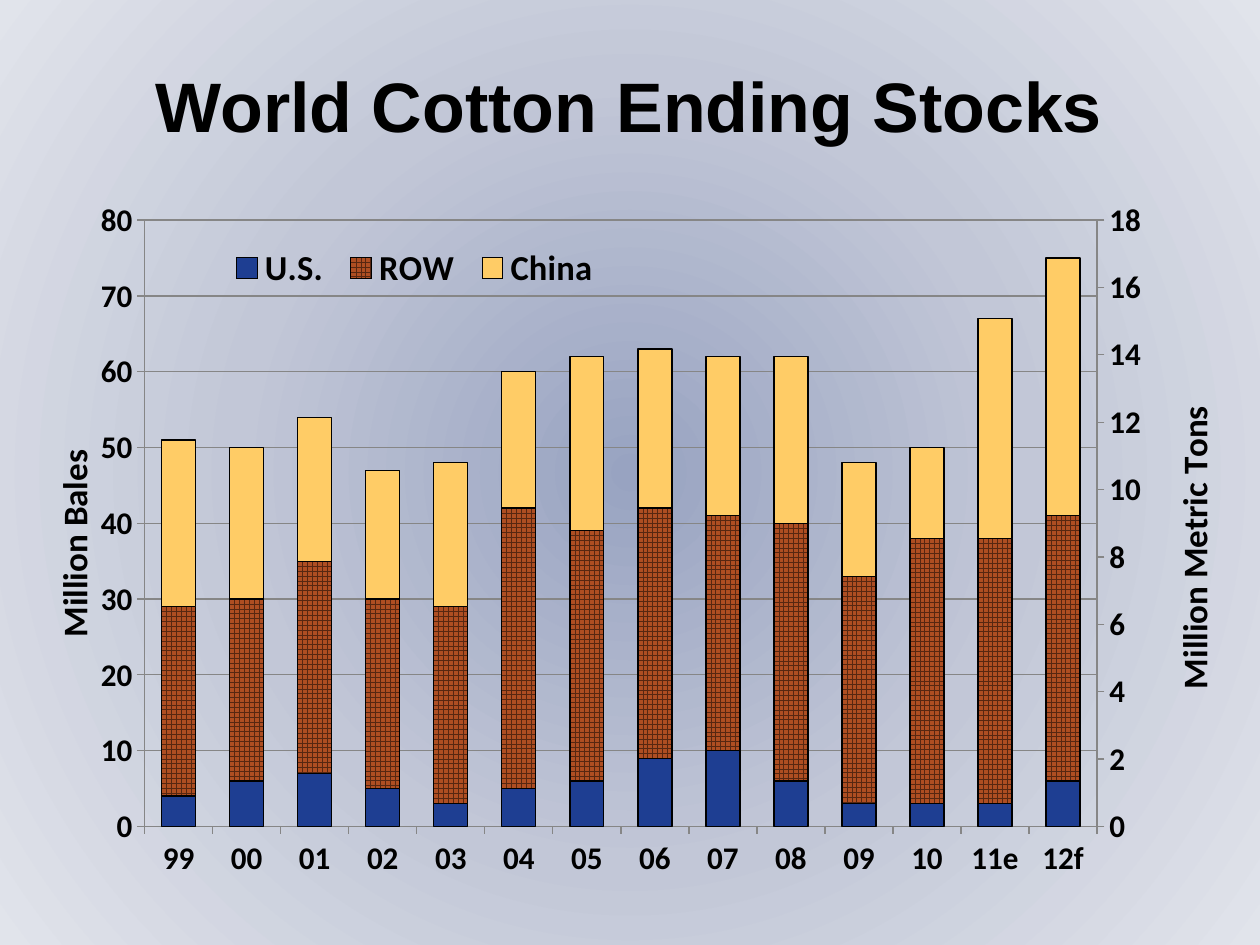
"""Build the world cotton ending stocks slide."""
import copy

import pptx
import pptx.chart.axis
import pptx.chart.data
import pptx.dml.color
import pptx.enum.chart
import pptx.enum.dml
import pptx.enum.text
import pptx.oxml
import pptx.util
from pptx.oxml.ns import nsdecls

Pt = pptx.util.Pt
COLORS = {
    "text": "000000", "axis": "868686", "us": "1E3E92", "china": "FFCC66",
    "row": "AE4E22", "row_grid": "572711",
    "center": "98A3C1", "middle": "C2C7D7", "edge": "E1E4EB",
}
YEARS = ["99", "00", "01", "02", "03", "04", "05", "06", "07", "08", "09", "10", "11e", "12f"]
BALES = {
    "U.S.": [4, 6, 7, 5, 3, 5, 6, 9, 10, 6, 3, 3, 3, 6],
    "ROW": [25, 24, 28, 25, 26, 37, 33, 33, 31, 34, 30, 35, 35, 35],
    "China": [22, 20, 19, 17, 19, 18, 23, 21, 21, 22, 15, 12, 29, 34],
}
TONS = {
    "Series 4": [0.9, 1.3, 1.6, 1.2, 0.8, 1.2, 1.3, 2.1, 2.2, 1.4, 0.6, 0.6, 0.7, 1.2],
    "Series 5": [5.4, 5.2, 6.2, 5.4, 5.6, 8, 7.2, 7.2, 6.9, 7.4, 6.5, 7.7, 7.7, 7.6],
    "Series 6": [4.9, 4.3, 4.1, 3.8, 4.1, 4, 4.9, 4.5, 4.5, 4.9, 3.3, 2.5, 6.4, 7.4],
}


def rgb(name):
    """Return the named colour."""
    return pptx.dml.color.RGBColor.from_string(COLORS[name])


def chart_xml(tag, body):
    """Return a chart element with the given content."""
    return pptx.oxml.parse_xml(f"<c:{tag} {nsdecls('c')}>{body}</c:{tag}>")


def place(parent, index, target="", **fractions):
    """Give a chart part a manual layout in fractions of the chart."""
    for old in parent.xpath("c:layout"):
        parent.remove(old)
    body = f'<c:layoutTarget val="{target}"/>' if target else ""
    body += '<c:xMode val="edge"/><c:yMode val="edge"/>'
    body += "".join(f'<c:{key} val="{val}"/>' for key, val in fractions.items())
    parent.insert(index, chart_xml("layout", f"<c:manualLayout>{body}</c:manualLayout>"))


class Deck:
    """Hold the style and the current slide."""

    title_font, chart_font = "Arial", "Calibri"

    def __init__(self, prs):
        """Add a blank slide."""
        self.s = prs.slides.add_slide(prs.slide_layouts[6])

    def style(self, font, size, name):
        """Apply the bold text style."""
        font.size, font.name, font.bold = Pt(size), name, True
        font.color.rgb = rgb("text")

    def background(self, *stops):
        """Fill the slide with a circular gradient."""
        fill = self.s.background.fill
        fill.solid()
        fill.fore_color.rgb = rgb(stops[0])
        step = 100000 // (len(stops) - 1)
        gs = "".join(f'<a:gs pos="{i * step}"><a:srgbClr val="{COLORS[name]}"/></a:gs>'
                     for i, name in enumerate(stops))
        solid = self.s.element.xpath("p:cSld/p:bg/p:bgPr/a:solidFill")[0]
        solid.getparent().replace(solid, pptx.oxml.parse_xml(
            f"<a:gradFill {nsdecls('a')} rotWithShape=\"1\"><a:gsLst>{gs}</a:gsLst>"
            '<a:path path="circle"><a:fillToRect l="50000" t="50000" r="50000" b="50000"/>'
            "</a:path></a:gradFill>"))

    def title(self, text, x, y, w, h):
        """Add the centred slide title."""
        tf = self.s.shapes.add_textbox(Pt(x), Pt(y), Pt(w), Pt(h)).text_frame
        tf.word_wrap = True
        tf.vertical_anchor = pptx.enum.text.MSO_ANCHOR.MIDDLE
        p = tf.paragraphs[0]
        p.alignment = pptx.enum.text.PP_ALIGN.CENTER
        r = p.add_run()
        r.text = text
        self.style(r.font, 40, self.title_font)

    def axis_title(self, axis, text, x, y):
        """Add a vertical axis title."""
        axis.has_title = True
        r = axis.axis_title.text_frame.paragraphs[0].add_run()
        r.text = text
        self.style(r.font, 20, self.chart_font)
        title = axis.axis_title._element
        body = title.xpath("c:tx/c:rich/a:bodyPr")[0]
        body.set("rot", "-5400000")
        body.set("vert", "horz")
        place(title, 1, x=x, y=y)

    def scale(self, axis, top, step, number_format):
        """Set the range and number format of a value axis."""
        axis.minimum_scale, axis.maximum_scale, axis.major_unit = 0, top, step
        axis.tick_labels.number_format = number_format
        axis.tick_labels.number_format_is_linked = False

    def right_axis(self, chart, count):
        """Move the series after the first count to a right axis."""
        left = chart.plots[0]._element
        right = copy.deepcopy(left)
        for ser in left.xpath("c:ser")[count:]:
            left.remove(ser)
        for ser in right.xpath("c:ser")[:count]:
            right.remove(ser)
        left.addnext(right)
        cat, val = (copy.deepcopy(a._element) for a in (chart.category_axis, chart.value_axis))
        ids = ["50010", "50020"]
        for ref, new in zip(right.xpath("c:axId"), ids):
            ref.set("val", new)
        for ax, own, other in ((cat, *ids), (val, *ids[::-1])):
            ax.xpath("c:axId")[0].set("val", own)
            ax.xpath("c:crossAx")[0].set("val", other)
        val.xpath("c:axPos")[0].set("val", "r")
        val.xpath("c:crosses")[0].set("val", "max")
        chart.value_axis._element.addnext(val)
        val.addnext(cat)
        pptx.chart.axis.CategoryAxis(cat).visible = False
        axis = pptx.chart.axis.ValueAxis(val)
        axis.has_major_gridlines = False
        return axis

    def legend(self, chart, hidden, **box):
        """Add a legend that leaves out the hidden entries."""
        chart.has_legend = True
        legend = chart.legend
        legend.position = pptx.enum.chart.XL_LEGEND_POSITION.TOP
        legend.include_in_layout = False
        self.style(legend.font, 20, self.chart_font)
        for n, i in enumerate(hidden, 1):
            legend._element.insert(n, chart_xml(
                "legendEntry", f'<c:idx val="{i}"/><c:delete val="1"/>'))
        place(legend._element, len(hidden) + 1, **box)

    def paint(self, series):
        """Colour the visible series and clear the others."""
        fill, line = series.format.fill, series.format.line
        if series.name in TONS:
            fill.background()
            line.fill.background()
            return
        line.color.rgb, line.width = rgb("text"), Pt(0.75)
        if series.name == "ROW":
            fill.patterned()
            fill.pattern = pptx.enum.dml.MSO_PATTERN.LARGE_GRID
            fill.fore_color.rgb, fill.back_color.rgb = rgb("row_grid"), rgb("row")
        else:
            fill.solid()
            fill.fore_color.rgb = rgb({"U.S.": "us", "China": "china"}[series.name])

    def stocks_chart(self, x, y, w, h):
        """Add the stacked columns with bales left and tons right."""
        data = pptx.chart.data.CategoryChartData()
        data.categories = YEARS
        for name, values in (BALES | TONS).items():
            data.add_series(name, values)
        chart = self.s.shapes.add_chart(
            pptx.enum.chart.XL_CHART_TYPE.COLUMN_STACKED,
            Pt(x), Pt(y), Pt(w), Pt(h), data).chart
        chart.has_title = False
        self.style(chart.font, 18, self.chart_font)
        plot = chart.plots[0]
        plot.gap_width, plot.overlap, plot.vary_by_categories = 100, 100, False
        for series in plot.series:
            self.paint(series)
        bales = chart.value_axis
        bales.has_major_gridlines = True
        for part in (chart.category_axis, bales, bales.major_gridlines):
            part.format.line.color.rgb = rgb("axis")
            part.format.line.width = Pt(0.75)
        for axis in (chart.category_axis, bales):
            axis.major_tick_mark = pptx.enum.chart.XL_TICK_MARK.OUTSIDE
        tons = self.right_axis(chart, len(BALES))
        self.scale(bales, 80, 10, "#,##0")
        self.scale(tons, 18, 2, "General")
        self.axis_title(bales, "Million Bales", 0.01, 0.39)
        self.axis_title(tons, "Million Metric Tons", 0.96, 0.33)
        self.legend(chart, range(len(BALES), len(BALES) + len(TONS)),
                    x=0.16, y=0.13, w=0.33, h=0.06)
        place(chart._chartSpace.xpath("c:chart/c:plotArea")[0], 0, "inner",
              x=0.096, y=0.097, w=0.808, h=0.804)


def main():
    """Build and save the slide."""
    prs = pptx.Presentation()
    prs.slide_width, prs.slide_height = Pt(720), Pt(540)
    deck = Deck(prs)
    deck.background("center", "middle", "edge")
    deck.title("World Cotton Ending Stocks", 18, 24, 683, 72)
    deck.stocks_chart(18, 84, 683, 431)
    prs.save("out.pptx")


if __name__ == "__main__":
    main()
